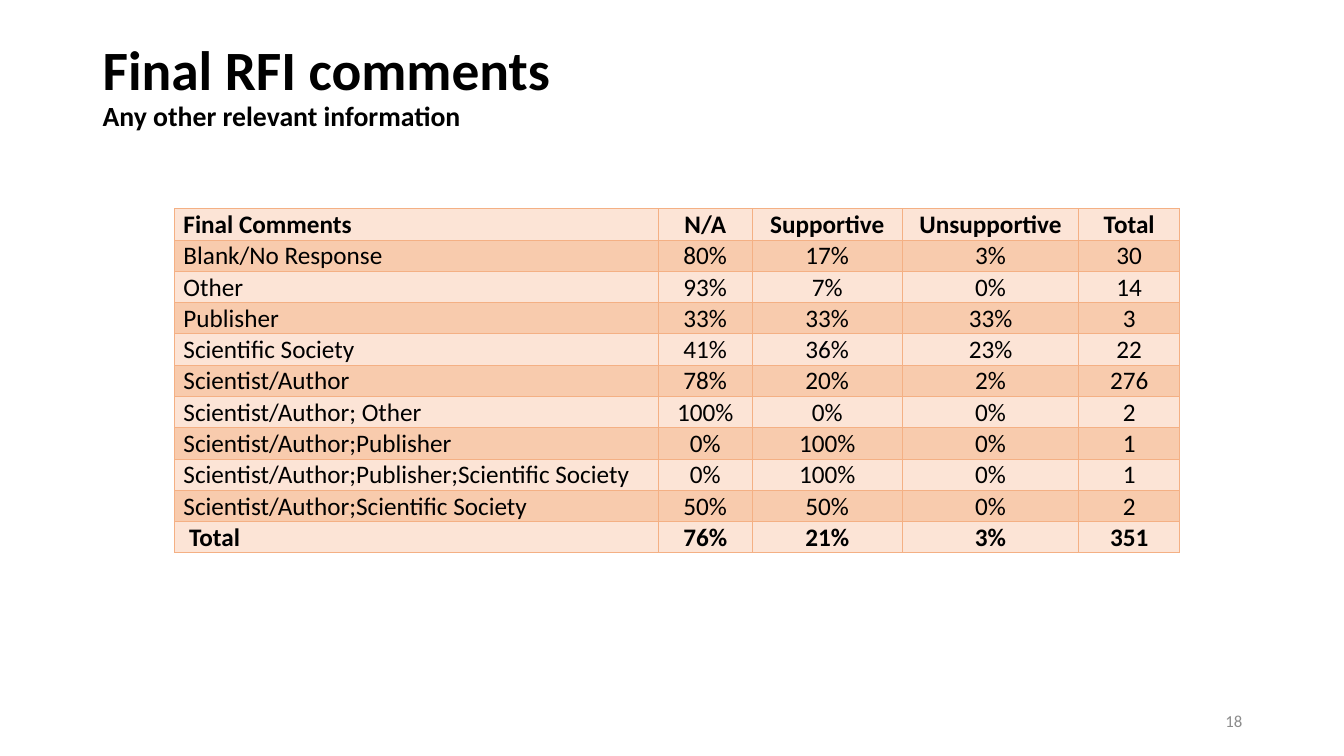
"""Build the slide with the table of final RFI comments."""
from typing import NamedTuple

import lxml.etree
import pptx
import pptx.dml.color
import pptx.enum.text
import pptx.oxml.ns
import pptx.util

PX = 9144
FONT = "Calibri"
COLORS = {
    "text": "000000",
    "number": "8C8C8C",
    "border": "F4B084",
    "light": "FCE4D6",
    "dark": "F8CBAD",
}
ALIGN = pptx.enum.text.PP_ALIGN
ANCHOR = pptx.enum.text.MSO_ANCHOR


class Box(NamedTuple):
    left: int
    top: int
    width: int
    height: int


class Column(NamedTuple):
    heading: str
    width: int
    align: ALIGN
    inset: int


class Response(NamedTuple):
    group: str
    na: str
    supportive: str
    unsupportive: str
    total: str


COLUMNS = [
    Column("Final Comments", 480, ALIGN.LEFT, 9),
    Column("N/A", 93, ALIGN.CENTER, 1),
    Column("Supportive", 149, ALIGN.CENTER, 1),
    Column("Unsupportive", 175, ALIGN.CENTER, 1),
    Column("Total", 100, ALIGN.CENTER, 1),
]
RESPONSES = [
    Response("Blank/No Response", "80%", "17%", "3%", "30"),
    Response("Other", "93%", "7%", "0%", "14"),
    Response("Publisher", "33%", "33%", "33%", "3"),
    Response("Scientific Society", "41%", "36%", "23%", "22"),
    Response("Scientist/Author", "78%", "20%", "2%", "276"),
    Response("Scientist/Author; Other", "100%", "0%", "0%", "2"),
    Response("Scientist/Author;Publisher", "0%", "100%", "0%", "1"),
    Response("Scientist/Author;Publisher;Scientific Society", "0%", "100%", "0%", "1"),
    Response("Scientist/Author;Scientific Society", "50%", "50%", "0%", "2"),
    Response(" Total", "76%", "21%", "3%", "351"),
]
ROW_HEIGHT = 31


def px(n: int) -> pptx.util.Emu:
    return pptx.util.Emu(n * PX)


def rgb(name: str) -> pptx.dml.color.RGBColor:
    return pptx.dml.color.RGBColor.from_string(COLORS[name])


def add_run(p, text: str, *, size: float, bold: bool = False, color: str = "text") -> None:
    r = p.add_run()
    r.text = text
    r.font.name = FONT
    r.font.size = pptx.util.Pt(size)
    r.font.bold = bold
    r.font.color.rgb = rgb(color)


def add_text_box(s, box: Box, align: ALIGN):
    tf = s.shapes.add_textbox(*map(px, box)).text_frame
    tf.word_wrap = True
    tf.vertical_anchor = ANCHOR.MIDDLE
    p = tf.paragraphs[0]
    p.alignment = align
    return p


def add_borders(cell) -> None:
    qn = pptx.oxml.ns.qn
    tc_pr = cell._tc.get_or_add_tcPr()
    for side in ("lnL", "lnR", "lnT", "lnB"):
        ln = lxml.etree.SubElement(tc_pr, qn(f"a:{side}"), w=str(pptx.util.Pt(0.5)))
        fill = lxml.etree.SubElement(ln, qn("a:solidFill"))
        lxml.etree.SubElement(fill, qn("a:srgbClr"), val=COLORS["border"])


def format_cell(cell, text: str, column: Column, *, bold: bool, fill: str) -> None:
    add_borders(cell)
    cell.fill.solid()
    cell.fill.fore_color.rgb = rgb(fill)
    cell.vertical_anchor = ANCHOR.BOTTOM
    cell.margin_left = px(column.inset)
    cell.margin_right = cell.margin_top = px(1)
    cell.margin_bottom = 0
    p = cell.text_frame.paragraphs[0]
    p.alignment = column.align
    add_run(p, text, size=18, bold=bold)


def add_response_table(s, left: int, top: int) -> None:
    rows = [tuple(c.heading for c in COLUMNS), *RESPONSES]
    box = Box(left, top, sum(c.width for c in COLUMNS), ROW_HEIGHT * len(rows))
    table = s.shapes.add_table(len(rows), len(COLUMNS), *map(px, box)).table
    table.first_row = False
    table.horz_banding = False
    for j, column in enumerate(COLUMNS):
        table.columns[j].width = px(column.width)
        for i, row in enumerate(rows):
            format_cell(
                table.cell(i, j), row[j], column,
                bold=i in (0, len(rows) - 1),
                fill="dark" if i % 2 else "light",
            )


def main() -> None:
    prs = pptx.Presentation()
    prs.slide_width, prs.slide_height = px(1333), px(750)
    s = prs.slides.add_slide(prs.slide_layouts[6])

    p = add_text_box(s, Box(92, 40, 1150, 93), ALIGN.LEFT)
    p.line_spacing = 0.9
    add_run(p, "Final RFI comments", size=39.6, bold=True)
    p.add_line_break()
    add_run(p, "Any other relevant information", size=19.8, bold=True)

    p = add_text_box(s, Box(942, 695, 300, 40), ALIGN.RIGHT)
    add_run(p, "18", size=12, color="number")

    add_response_table(s, 173, 207)
    prs.save("out.pptx")


if __name__ == "__main__":
    main()
